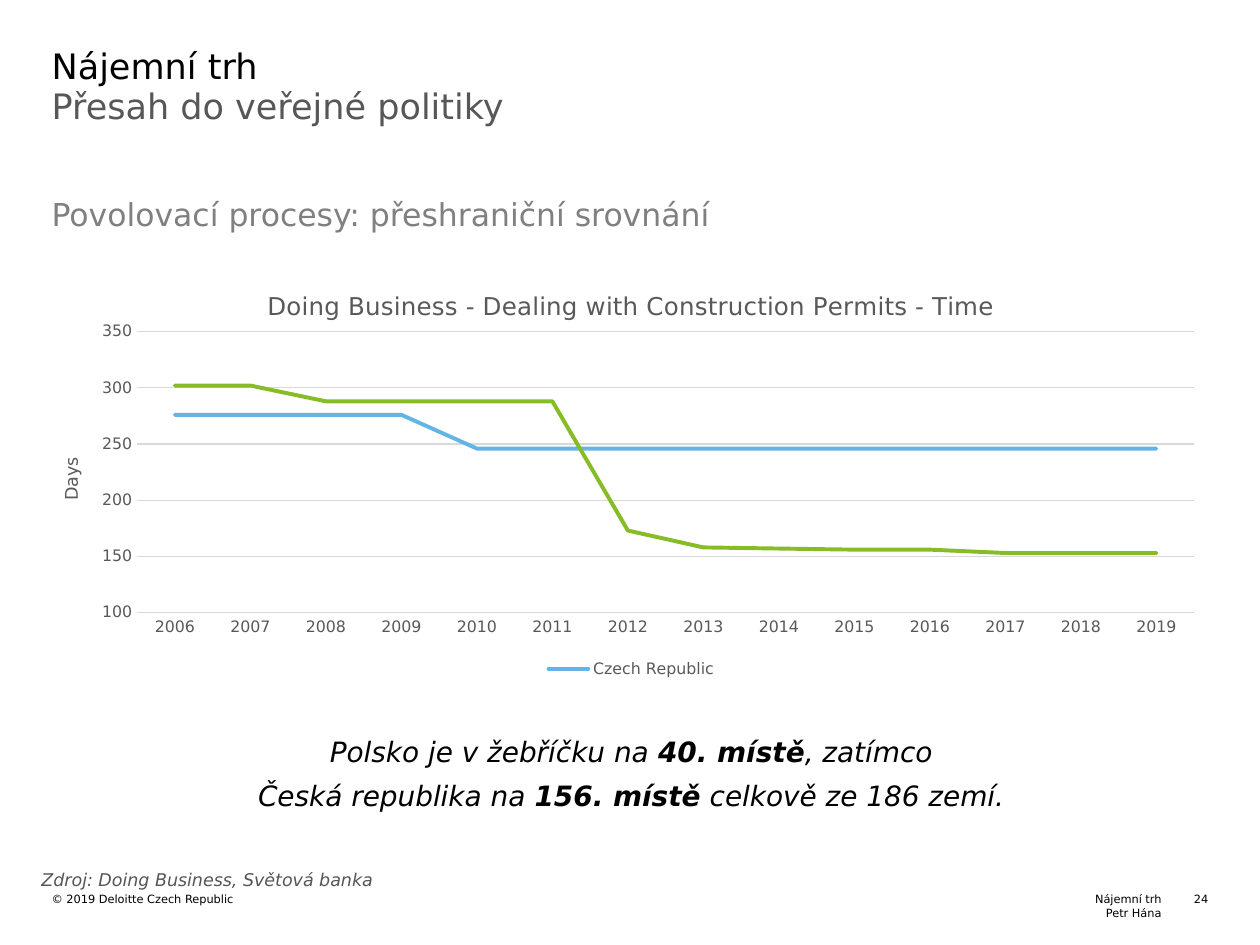
from lxml import etree
from pptx import Presentation
from pptx.chart.data import CategoryChartData
from pptx.dml.color import RGBColor
from pptx.enum.chart import XL_CHART_TYPE as ChartType, XL_LEGEND_POSITION as LegendPosition, XL_TICK_MARK as TickMark
from pptx.enum.text import PP_ALIGN as Align
from pptx.oxml import parse_xml
from pptx.oxml.ns import nsdecls, qn
from pptx.util import Pt

FONT = "DejaVu Sans"
COLORS = {
    "black": "000000", "subtitle": "575757", "heading": "808080", "source": "53565A",
    "chart_text": "595959", "grid": "D9D9D9", "czech": "62B5E5", "poland": "86BC25",
}


def style_font(font, size, color, bold=False, italic=False):
    font.name = FONT
    font.size = Pt(size)
    font.bold = bold
    font.italic = italic
    font.color.rgb = RGBColor.from_string(COLORS[color])


def add_text(left, top, width, height, lines, size, color, align=Align.LEFT, italic=False, gap=0, inset=(0, 0)):
    box = page.shapes.add_textbox(Pt(left), Pt(top), Pt(width), Pt(height))
    frame = box.text_frame
    frame.word_wrap = True
    frame.margin_left = frame.margin_right = Pt(inset[0])
    frame.margin_top = frame.margin_bottom = Pt(inset[1])
    frame.text = "\n".join(lines)
    for index, para in enumerate(frame.paragraphs):
        para.alignment = align
        if index:
            para.space_before = Pt(gap)
        pieces = para.text.split("*")
        para.text = pieces[0]
        for piece in pieces[1:]:
            para.add_run().text = piece
        for number, span in enumerate(para.runs):
            style_font(span.font, size, color, number % 2 == 1, italic)


deck = Presentation()
deck.slide_width, deck.slide_height = Pt(720), Pt(540)
page = deck.slides.add_slide(deck.slide_layouts[6])

add_text(374.4, 509.8, 289.4, 15.8, ["Nájemní trh", "Petr Hána"], 6.5, "black", Align.RIGHT)
add_text(29.5, 509.8, 316, 15.8, ["© 2019 Deloitte Czech Republic"], 6.5, "black")
add_text(672.5, 509.8, 18, 8, ["24"], 6.5, "black", Align.RIGHT)
add_text(29.5, 48.2, 659.5, 59.8, ["Přesah do veřejné politiky"], 20, "subtitle")
add_text(29.5, 25.2, 659.5, 26.6, ["Nájemní trh"], 20, "black")
add_text(29.5, 111.6, 630.7, 31, ["Povolovací procesy: přeshraniční srovnání"], 18, "heading")

data = CategoryChartData()
data.categories = [str(year) for year in range(2006, 2020)]
data.add_series("Czech Republic", [276] * 4 + [246] * 10)
data.add_series("Poland", [302] * 2 + [288] * 4 + [173, 158, 157, 156, 156] + [153] * 3)
chart = page.shapes.add_chart(ChartType.LINE, Pt(32.4), Pt(154.1), Pt(656.6), Pt(236.2), data).chart
style_font(chart.font, 10, "black")

chart.has_title = True
chart.chart_title.text_frame.text = "Doing Business - Dealing with Construction Permits - Time"
style_font(chart.chart_title.text_frame.paragraphs[0].runs[0].font, 14, "chart_text")
chart.chart_title.include_in_layout = False

years, days = chart.category_axis, chart.value_axis
for axis in (years, days):
    axis.major_tick_mark = axis.minor_tick_mark = TickMark.NONE
    style_font(axis.tick_labels.font, 9, "chart_text")
days.minimum_scale, days.maximum_scale, days.major_unit = 100, 350, 50
days.has_title = True
days.axis_title.text_frame.text = "Days"
style_font(days.axis_title.text_frame.paragraphs[0].runs[0].font, 10, "chart_text")
days.format.line.fill.background()
days.has_major_gridlines = True
for line in (years.format.line, days.major_gridlines.format.line):
    line.color.rgb = RGBColor.from_string(COLORS["grid"])
    line.width = Pt(0.75)

for series, color in zip(chart.plots[0].series, ("czech", "poland")):
    series.smooth = False
    series.format.line.color.rgb = RGBColor.from_string(COLORS[color])
    series.format.line.width = Pt(2.25)
    series.format.line._ln.set("cap", "rnd")
chart.plots[0].vary_by_categories = False

chart.has_legend = True
legend = chart.legend
legend.position = LegendPosition.BOTTOM
legend.include_in_layout = False
style_font(legend.font, 9, "chart_text")
legend._element.find(qn("c:legendPos")).addnext(parse_xml(
    f'<c:legendEntry {nsdecls("c")}><c:idx val="1"/><c:delete val="1"/></c:legendEntry>'))

plot_area = chart._chartSpace.chart.plotArea
for old in plot_area.findall(qn("c:layout")):
    plot_area.remove(old)
layout = etree.Element(qn("c:layout"))
manual = etree.SubElement(layout, qn("c:manualLayout"))
for tag, value in (("layoutTarget", "inner"), ("xMode", "edge"), ("yMode", "edge"),
                   ("x", "0.07"), ("y", "0.15"), ("w", "0.92"), ("h", "0.68")):
    etree.SubElement(manual, qn(f"c:{tag}")).set("val", value)
plot_area.insert(0, layout)

add_text(67.7, 419.8, 586.1, 44.6,
         ["Polsko je v žebříčku na *40. místě*, zatímco",
          "Česká republika na *156. místě* celkově ze 186 zemí."],
         16, "black", Align.CENTER, italic=True, gap=6)
add_text(16.6, 493.2, 211.7, 19.4, ["Zdroj: Doing Business, Světová banka"], 10, "source",
         italic=True, inset=(7.2, 3.6))

deck.save("out.pptx")
